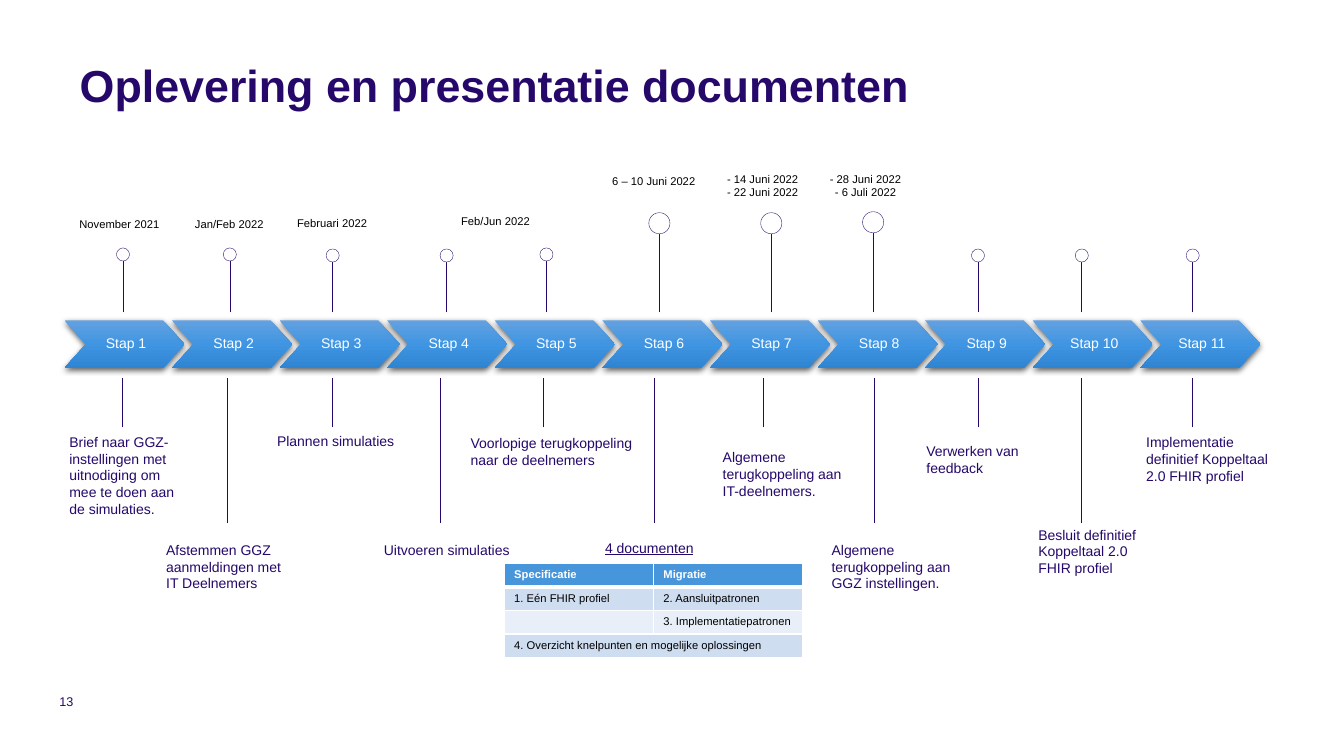
import pptx
import pptx.util
import pptx.dml.color
import pptx.enum.shapes
import pptx.enum.text
import pptx.oxml

Inches, Pt = pptx.util.Inches, pptx.util.Pt
RGB = pptx.dml.color.RGBColor.from_string
SHAPE = pptx.enum.shapes.MSO_SHAPE
ALIGN = pptx.enum.text.PP_ALIGN
ANCHOR = pptx.enum.text.MSO_ANCHOR
FIT = pptx.enum.text.MSO_AUTO_SIZE
NS = 'xmlns:a="http://schemas.openxmlformats.org/drawingml/2006/main"'

INK = {"title": "26086B", "note": "25086B", "date": "000000", "white": "FFFFFF",
       "head": "4795DB", "odd": "CFDDF1", "even": "E9EFF8"}
BLUES = [(0, "63A1E0"), (50, "4095E2"), (100, "3085D2")]

TITLE = "Oplevering en presentatie documenten"
NUMBER = "13"
SMALL, LARGE = 0.13, 0.21   # pin heads
SHORT, LONG = 4.24, 5.19    # lower ends of the stems

# pin centre, pin top, pin size, stem x, stem end; one row per step
STEPS = [
    (1.22, 2.46, SMALL, 1.21, SHORT),
    (2.28, 2.46, SMALL, 2.25, LONG),
    (3.30, 2.47, SMALL, 3.30, SHORT),
    (4.43, 2.47, SMALL, 4.37, LONG),
    (5.42, 2.46, SMALL, 5.39, SHORT),
    (6.54, 2.11, LARGE, 6.49, LONG),
    (7.65, 2.11, LARGE, 7.57, SHORT),
    (8.66, 2.10, LARGE, 8.67, LONG),
    (9.70, 2.47, SMALL, 9.70, SHORT),
    (10.73, 2.47, SMALL, 10.73, LONG),
    (11.83, 2.47, SMALL, 11.83, SHORT),
]
# left, top, width, height, text
NOTES = [
    (0.59, 4.25, 1.33, 0.94, "Brief naar GGZ-instellingen met uitnodiging om "
                             "mee te doen aan de simulaties."),
    (1.55, 5.32, 1.43, 0.61, "Afstemmen GGZ aanmeldingen met IT Deelnemers"),
    (2.65, 4.24, 1.43, 0.27, "Plannen simulaties"),
    (3.71, 5.32, 1.47, 0.27, "Uitvoeren simulaties"),
    (4.57, 4.26, 1.83, 0.44, "Voorlopige terugkoppeling naar de deelnemers"),
    (7.07, 4.40, 1.44, 0.61, "Algemene terugkoppeling aan IT-deelnemers."),
    (8.15, 5.32, 1.44, 0.61, "Algemene terugkoppeling aan GGZ instellingen."),
    (9.09, 4.34, 1.44, 0.44, "Verwerken van feedback"),
    (10.20, 5.17, 1.44, 0.61, "Besluit definitief\nKoppeltaal 2.0 FHIR profiel"),
    (11.27, 4.25, 1.44, 0.61, "Implementatie definitief Koppeltaal 2.0 FHIR profiel"),
]
DOCS = (5.88, 5.30, 1.12, 0.27, "4 documenten")
# left, top, height, text
DATES = [
    (0.62, 2.11, 0.24, "November 2021"),
    (1.71, 2.11, 0.24, "Jan/Feb 2022"),
    (2.73, 2.10, 0.24, "Februari 2022"),
    (4.35, 2.08, 0.24, "Feb/Jun 2022"),
    (5.92, 1.68, 0.24, "6 – 10 Juni 2022"),
    (7.00, 1.66, 0.37, "- 14 Juni 2022\n- 22 Juni 2022"),
    (8.02, 1.66, 0.37, "- 28 Juni 2022\n- 6 Juli 2022"),
]
ROWS = [
    ("head", "Specificatie", "Migratie"),
    ("odd", "1. Eén FHIR profiel", "2. Aansluitpatronen"),
    ("even", "", "3. Implementatiepatronen"),
    ("odd", "4. Overzicht knelpunten en mogelijke oplossingen", ""),
]


def write(frame, text, size, ink, align=ALIGN.LEFT, bold=False, line=False):
    frame.text = text
    for par in frame.paragraphs:
        par.alignment = align
        for run in par.runs:
            font = run.font
            font.name, font.size, font.bold = "Arial", Pt(size), bold
            font.color.rgb = RGB(INK[ink])
            if line:
                font.underline = True


def pad(frame, left, top, right, foot):
    frame.margin_left, frame.margin_top = Inches(left), Inches(top)
    frame.margin_right, frame.margin_bottom = Inches(right), Inches(foot)


def add_text(slide, left, top, width, height, text, *look, **more):
    box = slide.shapes.add_textbox(*map(Inches, (left, top, width, height)))
    box.text_frame.word_wrap = True
    box.text_frame.auto_size = FIT.SHAPE_TO_FIT_TEXT
    write(box.text_frame, text, *look, **more)
    return box.text_frame


def add_stem(slide, x, top, foot):
    stem = slide.shapes.add_connector(pptx.enum.shapes.MSO_CONNECTOR.STRAIGHT,
                                      *map(Inches, (x, foot, x, top)))
    stem.line.color.rgb = RGB(INK["title"])
    stem.line.width = Pt(0.5)
    stem.element.spPr.append(pptx.oxml.parse_xml(f"<a:effectLst {NS}/>"))


def add_pin(slide, x, top, size):
    add_stem(slide, x, top + size, 3.1)
    head = slide.shapes.add_shape(SHAPE.OVAL, *map(Inches, (x - size / 2, top, size, size)))
    head.shadow.inherit = False
    head.fill.solid()
    head.fill.fore_color.rgb = RGB(INK["white"])
    head.line.color.rgb = RGB(INK["title"])
    head.line.width = Pt(0.25)


def add_step(slide, rank):
    left = 0.64 + rank * 1.067
    step = slide.shapes.add_shape(SHAPE.CHEVRON, *map(Inches, (left, 3.18, 1.19, 0.47)))
    step.adjustments[0] = 0.45
    stops = "".join(f'<a:gs pos="{at * 1000}"><a:srgbClr val="{ink}"/></a:gs>'
                    for at, ink in BLUES)
    props = step.element.spPr
    props.append(pptx.oxml.parse_xml(
        f'<a:gradFill {NS} rotWithShape="1"><a:gsLst>{stops}</a:gsLst>'
        '<a:lin ang="5400000" scaled="0"/></a:gradFill>'))
    step.line.fill.background()
    props.append(pptx.oxml.parse_xml(
        f'<a:effectLst {NS}><a:outerShdw blurRad="{Pt(4.5)}" dist="{Pt(1.5)}" '
        'dir="5400000" algn="ctr" rotWithShape="0"><a:srgbClr val="000000">'
        '<a:alpha val="63000"/></a:srgbClr></a:outerShdw></a:effectLst>'))
    frame = step.text_frame
    pad(frame, 0.04, 0.01, 0.01, 0.01)
    frame.vertical_anchor = ANCHOR.MIDDLE
    write(frame, f"Stap {rank + 1}", 10, "white", ALIGN.CENTER)
    frame.paragraphs[0].line_spacing = 0.9


def edge(cell, head):
    """Draw white cell borders, thicker below the header."""
    props = cell._tc.get_or_add_tcPr()
    for side in "LRTB":
        wide = Pt(3 if head and side == "B" else 1)
        props.append(pptx.oxml.parse_xml(
            f'<a:ln{side} {NS} w="{wide}"><a:solidFill><a:srgbClr val="{INK["white"]}"/>'
            f'</a:solidFill></a:ln{side}>'))


def add_grid(slide):
    size = map(Inches, (5, 5.59, 2.96, 0.93))
    grid = slide.shapes.add_table(len(ROWS), 2, *size).table
    for r, (kind, *texts) in enumerate(ROWS):
        head = kind == "head"
        for c, text in enumerate(texts):
            cell = grid.cell(r, c)
            write(cell.text_frame, text, 8, "white" if head else "date", bold=head)
            cell.text_frame.paragraphs[0].font.size = Pt(8)
            edge(cell, head)
            cell.fill.solid()
            cell.fill.fore_color.rgb = RGB(INK[kind])
    grid.cell(3, 0).merge(grid.cell(3, 1))


def main():
    deck = pptx.Presentation()
    deck.slide_width, deck.slide_height = Inches(13.33), Inches(7.5)
    slide = deck.slides.add_slide(deck.slide_layouts[5])

    title = slide.shapes.title
    title.left, title.top, title.width, title.height = map(Inches, (0.79, 0.61, 11.76, 0.5))
    frame = title.text_frame
    pad(frame, 0, 0, 0, 0)
    frame.vertical_anchor = ANCHOR.TOP
    write(frame, TITLE, 32, "title", bold=True)
    frame.paragraphs[0].line_spacing = Pt(36)
    pad(add_text(slide, 0.59, 6.88, 0.2, 0.15, NUMBER, 9, "title"), 0, 0, 0, 0)

    for rank, (x, top, size, stem, foot) in enumerate(STEPS):
        add_step(slide, rank)
        add_pin(slide, x, top, size)
        add_stem(slide, stem, 3.75, foot)
    for note in NOTES:
        add_text(slide, *note, 10, "note")
    add_text(slide, *DOCS, 10, "note", ALIGN.CENTER, line=True)
    add_grid(slide)
    for left, top, height, text in DATES:
        add_text(slide, left, top, 1.13, height, text, 8, "date", ALIGN.CENTER)
    deck.save("out.pptx")


if __name__ == "__main__":
    main()
